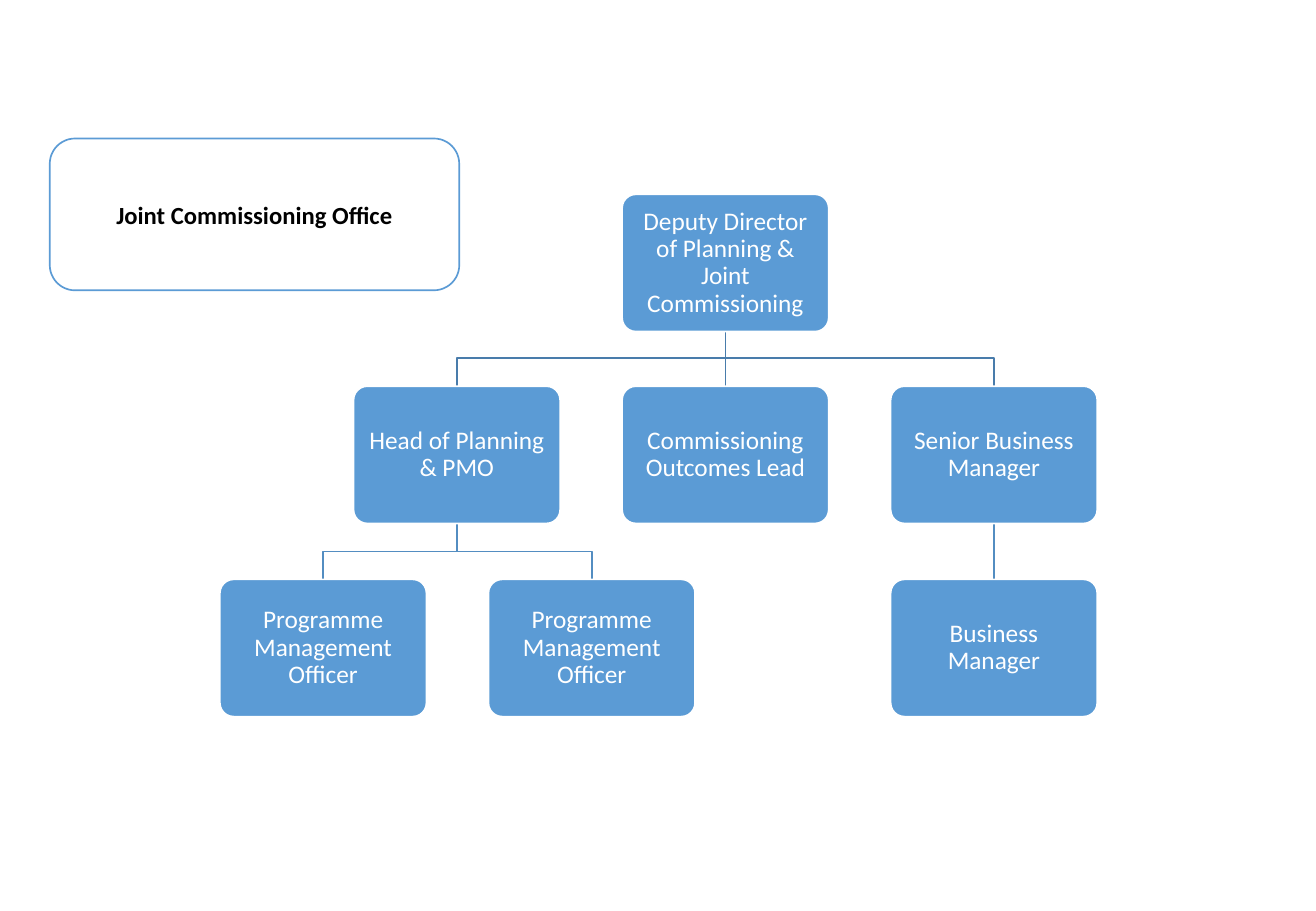
"""Build the organisation chart of the Joint Commissioning Office."""
from dataclasses import dataclass

from lxml.etree import SubElement
from pptx import Presentation
from pptx.dml.color import RGBColor
from pptx.enum.shapes import MSO_CONNECTOR as Connector, MSO_SHAPE as Preset
from pptx.enum.text import MSO_ANCHOR as Anchor, PP_ALIGN as Align
from pptx.oxml.ns import qn
from pptx.shapes.autoshape import Shape
from pptx.slide import Slide
from pptx.util import Emu, Pt

PX = 9144
FONT = "Calibri"
COLOURS = {
    "post": "5B9BD5",
    "white": "FFFFFF",
    "black": "000000",
    "upper link": "497CAB",
    "lower link": "538DC1",
}
POST_WIDTH, POST_HEIGHT = 170, 113
FIRST_CENTRE, COLUMN_PITCH = 266, 221
FIRST_TOP, TWO_ROWS = 160, 317


@dataclass(frozen=True)
class Post:
    """A job at a level of the chart, placed in half columns from the left."""

    title: str
    half_column: int
    level: int

    @property
    def centre(self) -> int:
        return FIRST_CENTRE + self.half_column * COLUMN_PITCH // 2

    @property
    def top(self) -> int:
        return FIRST_TOP + self.level * TWO_ROWS // 2

    @property
    def bottom(self) -> int:
        return self.top + POST_HEIGHT


@dataclass(frozen=True)
class Link:
    """A reporting line from a manager to a report."""

    manager: Post
    report: Post


DIRECTOR = Post("Deputy Director of Planning & Joint Commissioning", 3, 0)
PLANNING = Post("Head of Planning & PMO", 1, 1)
OUTCOMES = Post("Commissioning Outcomes Lead", 3, 1)
SENIOR = Post("Senior Business Manager", 5, 1)
OFFICERS = [Post("Programme Management Officer", half, 2) for half in (0, 2)]
BUSINESS = Post("Business Manager", 5, 2)
POSTS = [DIRECTOR, PLANNING, OUTCOMES, SENIOR, *OFFICERS, BUSINESS]
LINKS = [
    *(Link(DIRECTOR, head) for head in (PLANNING, OUTCOMES, SENIOR)),
    *(Link(PLANNING, officer) for officer in OFFICERS),
    Link(SENIOR, BUSINESS),
]


def px(length: int) -> Emu:
    """Turn px into EMU."""
    return Emu(length * PX)


def colour(name: str) -> RGBColor:
    """Look up a named colour."""
    return RGBColor.from_string(COLOURS[name])


def write(box: Shape, text: str, *, size: float, ink: str,
          bold: bool = False, spacing: float = 1.0) -> None:
    """Write one centred paragraph into a box."""
    frame = box.text_frame
    frame.word_wrap = True
    frame.vertical_anchor = Anchor.MIDDLE
    para = frame.paragraphs[0]
    para.alignment = Align.CENTER
    para.line_spacing = spacing
    span = para.add_run()
    span.text = text
    span.font.name = FONT
    span.font.size = Pt(size)
    span.font.bold = bold
    span.font.color.rgb = colour(ink)


def add_box(page: Slide, left: int, top: int, width: int, height: int,
            *, fill: str, line: str) -> Shape:
    """Add a rounded box with a thin outline."""
    box = page.shapes.add_shape(
        Preset.ROUNDED_RECTANGLE, px(left), px(top), px(width), px(height))
    box.shadow.inherit = False
    box.fill.solid()
    box.fill.fore_color.rgb = colour(fill)
    box.line.color.rgb = colour(line)
    box.line.width = Pt(1)
    return box


def draw_post(page: Slide, post: Post) -> None:
    """Draw the box of a post."""
    box = add_box(page, post.centre - POST_WIDTH // 2, post.top,
                  POST_WIDTH, POST_HEIGHT, fill="post", line="white")
    box.adjustments[0] = 0.1
    frame = box.text_frame
    frame.margin_left = frame.margin_right = px(6)
    frame.margin_top = frame.margin_bottom = px(6)
    write(box, post.title, size=15, ink="white", spacing=0.9)


def draw_link(page: Slide, link: Link) -> None:
    """Draw a straight or stepped line between two posts."""
    start, end = link.manager.centre, link.report.centre
    top, bottom = link.manager.bottom, link.report.top
    if start == end:
        line = page.shapes.add_connector(
            Connector.STRAIGHT, px(start), px(top), px(end), px(bottom))
        SubElement(line.element.spPr, qn("a:effectLst"))
    else:
        middle = (top + bottom) // 2
        outline = page.shapes.build_freeform(start, top, scale=PX)
        outline.add_line_segments(
            [(start, middle), (end, middle), (end, bottom)], close=False)
        line = outline.convert_to_shape()
        line.shadow.inherit = False
        line.fill.background()
    level = "lower link" if link.manager.level else "upper link"
    line.line.color.rgb = colour(level)
    line.line.width = Pt(1)


def main() -> None:
    """Build and save the deck."""
    deck = Presentation()
    deck.slide_width, deck.slide_height = px(1083), px(750)
    page = deck.slides.add_slide(deck.slide_layouts[6])
    for link in LINKS:
        draw_link(page, link)
    for post in POSTS:
        draw_post(page, post)
    office = add_box(page, 41, 114, 337, 125, fill="white", line="post")
    write(office, "Joint Commissioning Office", size=14.6, ink="black", bold=True)
    deck.save("out.pptx")


if __name__ == "__main__":
    main()
